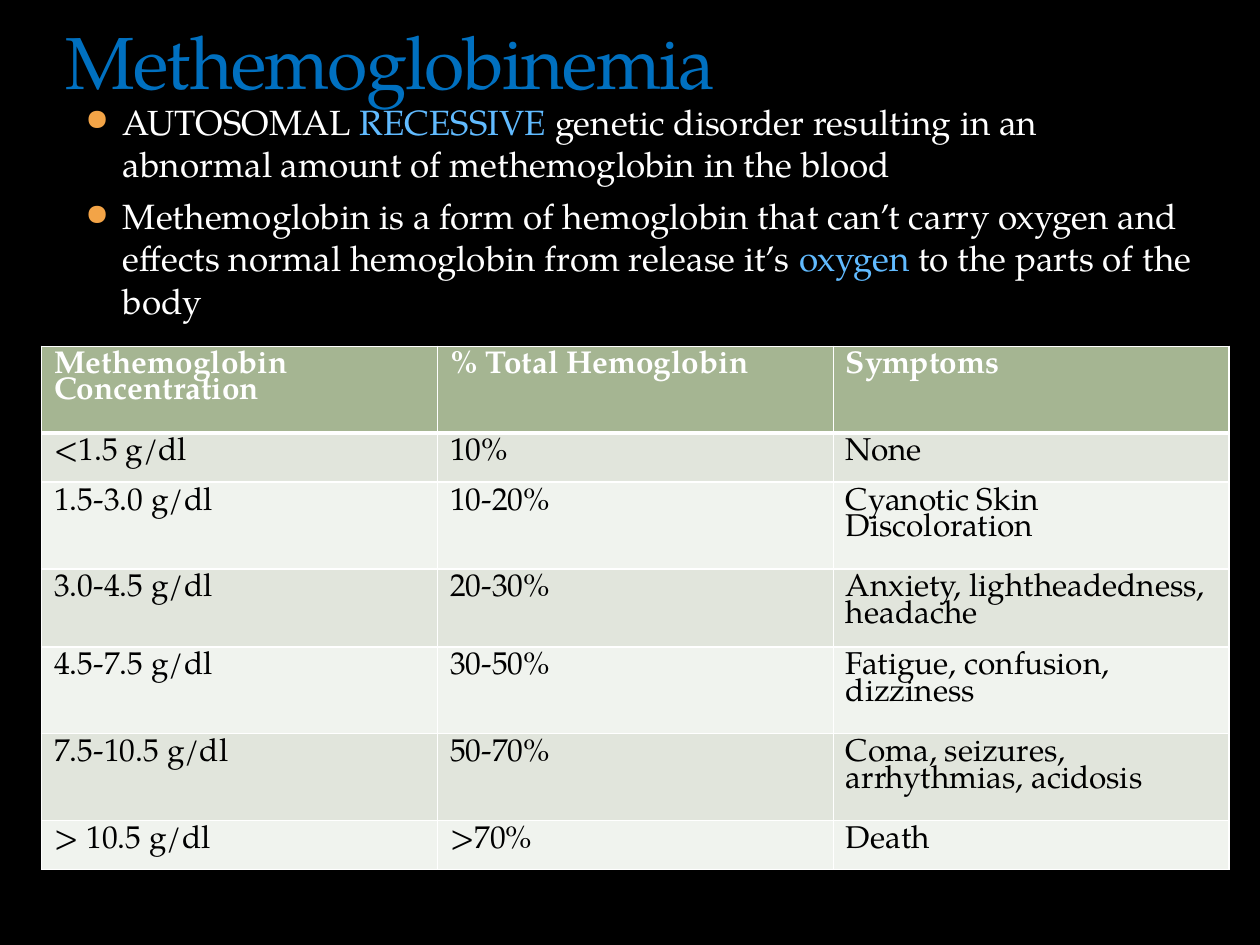
from lxml import etree
from pptx import Presentation
from pptx.dml.color import RGBColor
from pptx.enum.text import MSO_ANCHOR
from pptx.oxml.ns import qn
from pptx.util import Cm, Pt

BOTTOM = MSO_ANCHOR.BOTTOM
FONT = "TeX Gyre Pagella"
WHITE, BLACK, BLUE, LIGHT_BLUE, ORANGE = "FFFFFF", "000000", "0070C0", "61BBFF", "F3A447"
HEADER_FILL, BAND_FILLS = "A5B592", ("E1E5DC", "F0F3EE")

TITLE = "Methemoglobinemia"
BULLETS = [
    [("AUTOSOMAL ", WHITE), ("RECESSIVE", LIGHT_BLUE),
     (" genetic disorder resulting in an abnormal amount of methemoglobin in the blood", WHITE)],
    [("Methemoglobin is a form of hemoglobin that can’t carry oxygen and effects normal "
      "hemoglobin from release it’s ", WHITE), ("oxygen", LIGHT_BLUE),
     (" to the parts of the body", WHITE)],
]
ROWS = [
    ("Methemoglobin\nConcentration", "% Total Hemoglobin", "Symptoms"),
    ("<1.5 g/dl", "10%", "None"),
    ("1.5-3.0 g/dl", "10-20%", "Cyanotic Skin Discoloration"),
    ("3.0-4.5 g/dl", "20-30%", "Anxiety, lightheadedness, headache"),
    ("4.5-7.5 g/dl", "30-50%", "Fatigue, confusion, dizziness"),
    ("7.5-10.5 g/dl", "50-70%", "Coma, seizures, arrhythmias, acidosis"),
    ("> 10.5 g/dl", ">70%", "Death"),
]
ROW_HEIGHTS = [1.75, 0.99, 1.75, 1.57, 1.75, 1.75, 0.99]
COL_WIDTH = 7.98


def rgb(value):
    return RGBColor.from_string(value)


def style(r, size, color, bold=False):
    r.font.name, r.font.size, r.font.bold = FONT, Pt(size), bold
    r.font.color.rgb = rgb(color)


def add_text_box(slide, left, top, width, height):
    tf = slide.shapes.add_textbox(Cm(left), Cm(top), Cm(width), Cm(height)).text_frame
    tf.word_wrap = True
    return tf


def add_bullet(p):
    pPr = p._p.get_or_add_pPr()
    pPr.set("marL", str(Cm(0.76)))
    pPr.set("indent", str(-Cm(0.76)))
    color = etree.SubElement(pPr, qn("a:buClr"))
    etree.SubElement(color, qn("a:srgbClr"), val=ORANGE)
    etree.SubElement(pPr, qn("a:buSzPct"), val="85000")
    etree.SubElement(pPr, qn("a:buChar"), char="●")


def set_borders(cell, bottom, top):
    tcPr = cell._tc.get_or_add_tcPr()
    widths = {"a:lnL": 1, "a:lnR": 1, "a:lnT": top, "a:lnB": bottom}
    for i, (tag, width) in enumerate(widths.items()):
        ln = etree.Element(qn(tag), w=str(Pt(width)))
        fill = etree.SubElement(ln, qn("a:solidFill"))
        etree.SubElement(fill, qn("a:srgbClr"), val=WHITE)
        tcPr.insert(i, ln)


def add_title(slide):
    tf = add_text_box(slide, 1.07, 0, 22.86, 2.11)
    tf.vertical_anchor = BOTTOM
    tf.margin_bottom = 0
    tf.text = TITLE
    r = tf.paragraphs[0].runs[0]
    style(r, 42, BLUE)
    r.font._element.set("spc", "-100")


def add_bullets(slide):
    tf = add_text_box(slide, 1.47, 1.9, 22.86, 6.5)
    for i, parts in enumerate(BULLETS):
        p = tf.add_paragraph() if i else tf.paragraphs[0]
        p.space_before = Pt(6)
        add_bullet(p)
        for text, color in parts:
            r = p.add_run()
            r.text = text
            style(r, 20, color)


def add_symptom_table(slide):
    cols = len(ROWS[0])
    table = slide.shapes.add_table(len(ROWS), cols, Cm(0.84), Cm(6.98),
                                   Cm(COL_WIDTH * cols), Cm(sum(ROW_HEIGHTS))).table
    for col in table.columns:
        col.width = Cm(COL_WIDTH)
    for i, (row, height) in enumerate(zip(ROWS, ROW_HEIGHTS)):
        table.rows[i].height = Cm(height)
        header = i == 0
        for j, text in enumerate(row):
            cell = table.cell(i, j)
            cell.text = text
            cell.fill.solid()
            cell.fill.fore_color.rgb = rgb(HEADER_FILL if header else BAND_FILLS[(i - 1) % 2])
            set_borders(cell, bottom=3 if header else 1, top=3 if i == 1 else 1)
            for p in cell.text_frame.paragraphs:
                p.line_spacing = 0.85
                style(p.runs[0], 18, WHITE if header else BLACK, header)


def main():
    prs = Presentation()
    prs.slide_width, prs.slide_height = Cm(25.4), Cm(19.05)
    slide = prs.slides.add_slide(prs.slide_layouts[6])
    slide.background.fill.solid()
    slide.background.fill.fore_color.rgb = rgb(BLACK)
    add_title(slide)
    add_bullets(slide)
    add_symptom_table(slide)
    prs.save("out.pptx")


if __name__ == "__main__":
    main()
